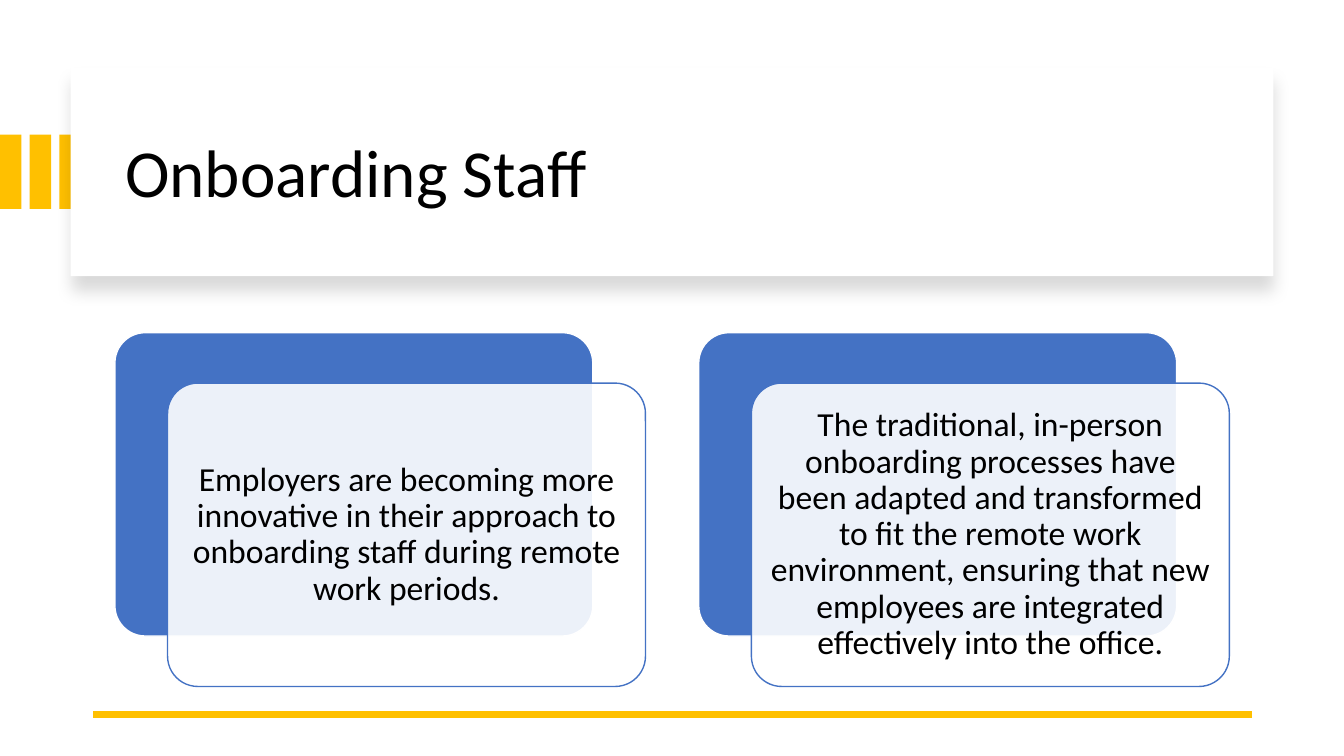
from dataclasses import dataclass

from lxml.etree import SubElement
from pptx import Presentation
from pptx.dml.color import RGBColor
from pptx.enum.shapes import MSO_CONNECTOR, MSO_SHAPE
from pptx.enum.text import MSO_ANCHOR, MSO_AUTO_SIZE, PP_ALIGN
from pptx.oxml.ns import qn
from pptx.util import Inches, Pt


@dataclass(frozen=True)
class Theme:
    gold: RGBColor = RGBColor(0xFF, 0xC0, 0x00)
    blue: RGBColor = RGBColor(0x44, 0x72, 0xC4)
    white: RGBColor = RGBColor(0xFF, 0xFF, 0xFF)
    black: RGBColor = RGBColor(0x00, 0x00, 0x00)
    font: str = "Calibri"
    title_size: Pt = Pt(48)
    card_size: Pt = Pt(24)


THEME = Theme()
SLIDE_W, SLIDE_H = Inches(13.33), Inches(7.5)

MESSAGES = (
    "Employers are becoming more innovative in their approach to onboarding "
    "staff during remote work periods.",
    "The traditional, in-person onboarding processes have been adapted and "
    "transformed to fit the remote work environment, ensuring that new "
    "employees are integrated effectively into the office.",
)


def across(percent):
    return round(SLIDE_W * percent / 100)


def down(percent):
    return round(SLIDE_H * percent / 100)


def box(left, top, width, height):
    """Turn percentages of the slide into a position and size."""
    return across(left), down(top), across(width), down(height)


def apply_format(target, values):
    for name, value in values.items():
        setattr(target, name, value)


def add_block(shapes, preset, place, fill, outline=None):
    block = shapes.add_shape(preset, *box(*place))
    block.shadow.inherit = False
    block.fill.solid()
    block.fill.fore_color.rgb = fill
    if outline is None:
        block.line.fill.background()
    else:
        block.line.color.rgb = outline
        block.line.width = Pt(1)
    return block


def write_text(frame, words, size, alignment, inset):
    apply_format(frame, {
        "word_wrap": True,
        "auto_size": MSO_AUTO_SIZE.NONE,
        "vertical_anchor": MSO_ANCHOR.MIDDLE,
        "margin_left": inset,
        "margin_right": inset,
    })
    frame.text = words
    paragraph = frame.paragraphs[0]
    apply_format(paragraph, {"alignment": alignment, "line_spacing": 0.9})
    font = paragraph.runs[0].font
    apply_format(font, {"name": THEME.font, "size": size})
    font.color.rgb = THEME.black


def set_opacity(shape, percent):
    colour = shape.fill._xPr.find(qn("a:solidFill"))[0]
    SubElement(colour, qn("a:alpha"), val=str(percent * 1000))


def cast_shadow(shape, blur, distance, opacity):
    effects = shape._element.spPr.find(qn("a:effectLst"))
    shadow = SubElement(effects, qn("a:outerShdw"), blurRad=str(Pt(blur)),
                        dist=str(Pt(distance)), dir="5400000", algn="t",
                        rotWithShape="0")
    colour = SubElement(shadow, qn("a:srgbClr"), val=str(THEME.black))
    SubElement(colour, qn("a:alpha"), val=str(opacity * 1000))


def add_stripes(slide):
    stripes = slide.shapes.add_group_shape().shapes
    for index in range(3):
        add_block(stripes, MSO_SHAPE.RECTANGLE,
                  (2.21 * index, 17.8, 1.6, 9.85), THEME.gold)


def add_heading(slide, words):
    panel = add_block(slide.shapes, MSO_SHAPE.RECTANGLE,
                      (5.25, 8.93, 89.5, 27.6), THEME.white)
    cast_shadow(panel, blur=11, distance=10, opacity=15)
    title = slide.shapes.title
    places = box(8.55, 11.87, 83.5, 22.67)
    apply_format(title, dict(zip(("left", "top", "width", "height"), places)))
    write_text(title.text_frame, words, THEME.title_size, PP_ALIGN.LEFT,
               Inches(0.1))
    # Bring the title in front of its panel
    slide.shapes._spTree.append(title._element)


def add_rule(slide):
    rule = slide.shapes.add_connector(MSO_CONNECTOR.STRAIGHT, across(93.17),
                                      down(94.53), across(6.9), down(94.53))
    rule.line.color.rgb = THEME.gold
    rule.line.width = Pt(4.5)
    SubElement(rule._element.spPr, qn("a:effectLst"))


def add_card(shapes, left, message):
    top, width, height = 44, 35.56, 40.13
    backing = add_block(shapes, MSO_SHAPE.ROUNDED_RECTANGLE,
                        (left, top, width, height), THEME.blue, THEME.white)
    front = add_block(shapes, MSO_SHAPE.ROUNDED_RECTANGLE,
                      (left + 3.92, top + 6.67, width, height),
                      THEME.white, THEME.blue)
    for layer in (backing, front):
        layer.adjustments[0] = 0.1
    set_opacity(front, 90)
    apply_format(front.text_frame, {"margin_top": Inches(0.1),
                                    "margin_bottom": Inches(0.1)})
    write_text(front.text_frame, message, THEME.card_size, PP_ALIGN.CENTER,
               Inches(0.1))


def main():
    deck = Presentation()
    apply_format(deck, {"slide_width": SLIDE_W, "slide_height": SLIDE_H})
    slide = deck.slides.add_slide(deck.slide_layouts[5])

    # Header
    add_stripes(slide)
    add_heading(slide, "Onboarding Staff")

    # Bottom rule
    add_rule(slide)

    # Message cards
    cards = slide.shapes.add_group_shape().shapes
    for index, message in enumerate(MESSAGES):
        add_card(cards, 8.55 + 43.44 * index, message)

    deck.save("out.pptx")


if __name__ == "__main__":
    main()
